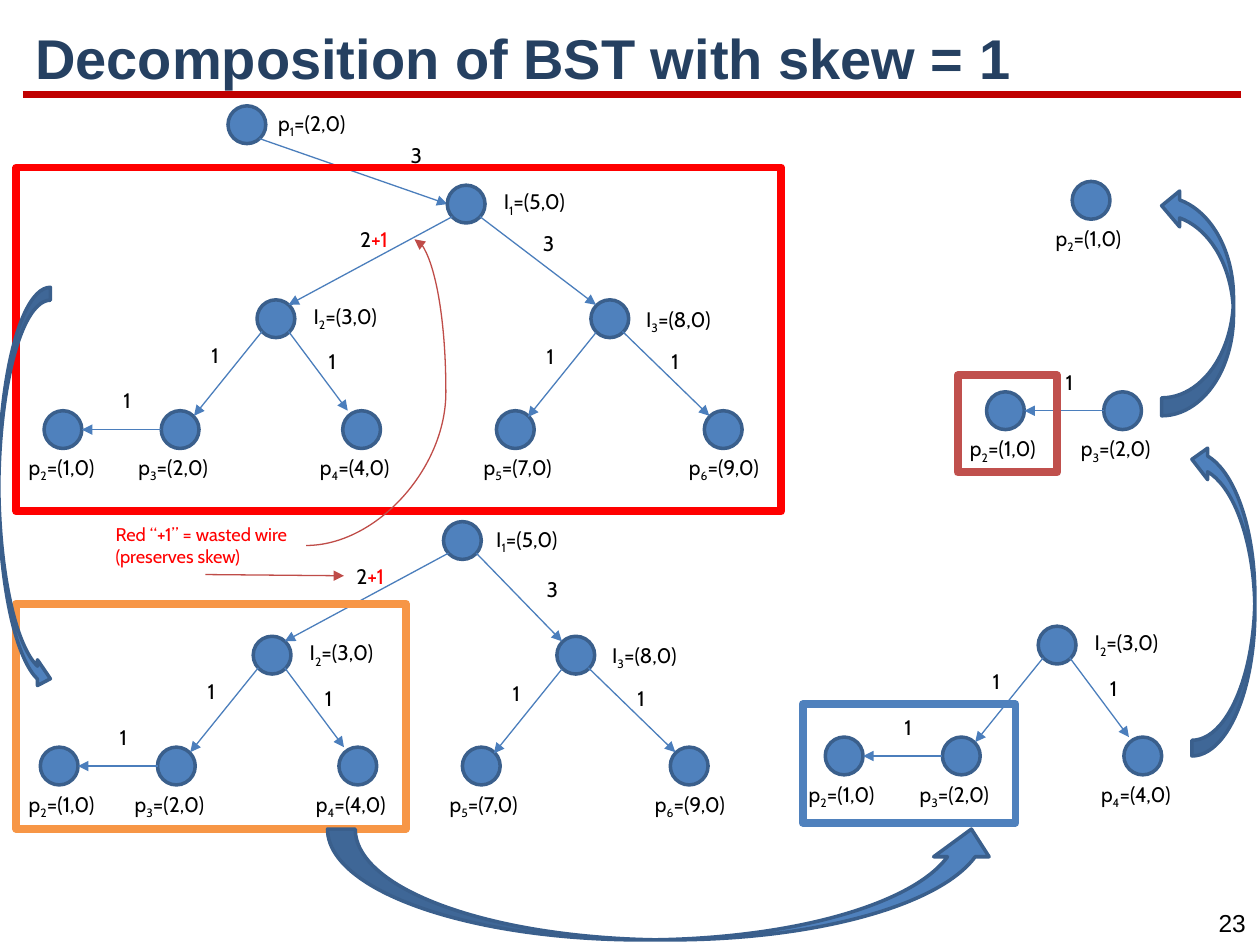
import pptx
import pptx.util
import pptx.dml.color
import pptx.enum.shapes
import pptx.enum.text
import pptx.oxml.ns
from dataclasses import dataclass
from lxml import etree

presentation = pptx.Presentation()
presentation.slide_width = pptx.util.Inches(10)
presentation.slide_height = pptx.util.Inches(7.5)

# Grid of 100 columns by 75 rows
COLUMN = presentation.slide_width / 100
ROW = presentation.slide_height / 75
NODE = 3
MIDDLE = NODE / 2
SHAPES = pptx.enum.shapes.MSO_SHAPE
CONNECTORS = pptx.enum.shapes.MSO_CONNECTOR
BLUE, OUTLINE, EDGE = "4F81BD", "3A5F8C", "4B7EBC"
RED, NOTE_RED = "FF0000", "BF4C48"


def colour(value):
    return pptx.dml.color.RGBColor.from_string(value)


def format_run(run, size, value="000000", font="Cabin", bold=False):
    run.font.size = pptx.util.Pt(size)
    run.font.name = font
    run.font.bold = bold
    run.font.color.rgb = colour(value)


@dataclass
class Region:
    """A part of the slide whose contents are placed from its left top corner."""
    slide: object
    left: float = 0
    top: float = 0

    def spot(self, column, row):
        return round((self.left + column) * COLUMN), round((self.top + row) * ROW)

    def box(self, column, row, width, height):
        return *self.spot(column, row), round(width * COLUMN), round(height * ROW)

    def shape(self, kind, bounds, fill=BLUE, line=OUTLINE, weight=2):
        shape = self.slide.shapes.add_shape(kind, *self.box(*bounds))
        shape.shadow.inherit = False
        if fill:
            shape.fill.solid()
            shape.fill.fore_color.rgb = colour(fill)
        else:
            shape.fill.background()
        shape.line.color.rgb = colour(line)
        shape.line.width = pptx.util.Pt(weight)
        return shape

    def frame(self, bounds, line):
        self.shape(SHAPES.RECTANGLE, bounds, None, line, 4.5)

    def text(self, column, row, parts, size=12, width=10, height=3, font="Cabin"):
        """Each part is a text and its colour."""
        text_box = self.slide.shapes.add_textbox(*self.box(column, row, width, height))
        text_box.text_frame.word_wrap = True
        paragraph = text_box.text_frame.paragraphs[0]
        for words, value in parts:
            run = paragraph.add_run()
            run.text = words
            format_run(run, size, value, font)
        return paragraph

    def weight(self, column, row, words="1", extra=""):
        parts = [(words, "000000")] + ([(extra, RED)] if extra else [])
        self.text(column, row, parts, width=5.5 if extra else 2.9)

    def node(self, column, row, name, value, shift=(-2.8, NODE)):
        """A circle and its label, such as p1=(2,0), at a shift from the circle."""
        self.shape(SHAPES.OVAL, (column, row, NODE, NODE))
        parts = [(words, "000000") for words in (name[0], name[1:], f"=({value},0)")]
        paragraph = self.text(column + shift[0], row + shift[1], parts)
        paragraph.runs[1]._r.get_or_add_rPr().set("baseline", "-25000")

    def line(self, start, end, value=EDGE, width=0.75, arrow=True,
             kind=CONNECTORS.STRAIGHT):
        connector = self.slide.shapes.add_connector(kind, *self.spot(*start), *self.spot(*end))
        connector.line.color.rgb = colour(value)
        connector.line.width = pptx.util.Pt(width)
        if arrow:
            tail = etree.SubElement(connector.line._get_or_add_ln(),
                                    pptx.oxml.ns.qn("a:tailEnd"))
            tail.set("type", "triangle")
        etree.SubElement(connector._element.spPr, pptx.oxml.ns.qn("a:effectLst"))
        return connector


def draw_pair(region, shift=-2.3):
    """p3 joined to p2."""
    region.node(0, 0, "p2", 1, (shift, NODE))
    region.node(9.3, 0, "p3", 2)
    region.line((9.3, MIDDLE), (NODE, MIDDLE))
    region.weight(5.3, -2.3)


def draw_left_tree(region, shift=-2.3):
    """I2 over the pair and p4."""
    draw_pair(region, shift)
    region.node(23.7, 0, "p4", 4)
    region.node(16.9, -8.8, "I2", 3, (3.5, -0.2))
    region.line((17.3, -6.3), (11.9, 0.4))
    region.line((19.4, -6.3), (24.1, 0))
    region.weight(12.3, -5.9)
    region.weight(21.6, -5.4)


def draw_right_tree(region):
    """I3 over p5 and p6."""
    region.node(0, 0, "p5", 7, (-2, NODE))
    region.node(16.5, 0, "p6", 9, (-2.2, NODE))
    region.node(7.5, -8.8, "I3", 8, (3.4, 0))
    region.line((7.9, -6.2), (2.5, 0.5))
    region.line((10, -6.3), (16.9, 0.4))
    region.weight(3, -5.8)
    region.weight(12.9, -5.4)


def draw_full_tree(region, right, root_shift, weight_spot, left_shift):
    """I1 over the left tree and the right tree."""
    draw_left_tree(region, left_shift)
    draw_right_tree(Region(region.slide, region.left + right, region.top))
    region.node(32, -17.9, "I1", 5, root_shift)
    region.line((32.4, -15.4), (19.4, -8.4))
    region.line((34.6, -15.4), (right + 7.9, -8.4))
    region.weight(24.1, -15.1, "2", "+1")
    region.weight(*weight_spot, "3")


def draw_header(region, title):
    region.line((1.8, 7.5), (98.5, 7.5), "C00000", 4.5, False)
    title.left, title.top, title.width, title.height = region.box(1.8, 1.6, 96.8, 6.5)
    title.text_frame.text = "Decomposition of BST with skew = 1"
    title.text_frame.vertical_anchor = pptx.enum.text.MSO_ANCHOR.MIDDLE
    paragraph = title.text_frame.paragraphs[0]
    paragraph.alignment = pptx.enum.text.PP_ALIGN.LEFT
    paragraph.line_spacing = 0.9
    format_run(paragraph.runs[0], 32, "254061", "Arial", True)
    number = region.text(95.6, 71.6, [("23", "000000")], 14, 4.4, 3.4, "Arial")
    number.alignment = pptx.enum.text.PP_ALIGN.CENTER


def draw_step_arrows(region):
    """Curved block arrows from each step to the next."""
    region.shape(SHAPES.CURVED_UP_ARROW, (26, 65.8, 53.3, 8.8))
    for bounds in ((94.6, 35.2, 5, 24.8), (92.2, 14.9, 5.7, 18.1)):
        arrow = region.shape(SHAPES.CURVED_LEFT_ARROW, bounds)
        arrow.rotation = 180
        arrow._element.spPr.xfrm.set("flipH", "1")
    region.shape(SHAPES.CURVED_RIGHT_ARROW, (-0.1, 22.8, 4.1, 32.1))


def draw_note(region):
    """The remark on wasted wire, pointing at both +1 weights."""
    region.text(0, 0, [("Red “+1” = wasted wire (preserves skew)", RED)], 10.5, 16.1, 4.5)
    region.line((8.1, 4.6), (19.1, 4.7), NOTE_RED)
    curve = region.line((16.1, 2.3), (24.7, -22), NOTE_RED, kind=CONNECTORS.CURVE)
    geometry = curve._element.spPr.find(pptx.oxml.ns.qn("a:prstGeom"))
    adjustments = geometry.find(pptx.oxml.ns.qn("a:avLst"))
    if adjustments is None:
        adjustments = etree.SubElement(geometry, pptx.oxml.ns.qn("a:avLst"))
    guide = etree.SubElement(adjustments, pptx.oxml.ns.qn("a:gd"))
    guide.set("name", "adj1")
    guide.set("fmla", "val 129000")


def main():
    slide = presentation.slides.add_slide(presentation.slide_layouts[5])
    page = Region(slide)
    draw_header(page, slide.shapes.title)

    # First tree, with p1 above it
    page.node(18.1, 8.4, "p1", 2, (NODE, -0.1))
    page.line((20.6, 11), (35.5, 16.2))
    page.weight(31.6, 10.8, "3")
    draw_full_tree(Region(slide, 3.5, 32.6), 35.9, (3.5, -0.2), (38.6, -14.8), -2.2)

    # Remaining steps
    draw_full_tree(Region(slide, 3.2, 59.3), 33.5, (3.2, -0.1), (39.2, -14), -1.9)
    draw_left_tree(Region(slide, 65.5, 58.5))
    draw_pair(Region(slide, 78.3, 31.1))
    page.node(85.1, 14.4, "p2", 1, (-2.3, NODE))

    # Frames around the part that goes on to the next step
    page.frame((1.3, 13.3, 60.7, 27.3), RED)
    page.frame((1.3, 47.9, 30.9, 17.9), "F79646")
    page.frame((63.7, 55.9, 16.9, 9.4), BLUE)
    page.frame((76, 29.8, 7.9, 7.7), "C0504D")

    draw_step_arrows(page)
    draw_note(Region(slide, 8.2, 41))
    presentation.save("out.pptx")


if __name__ == "__main__":
    main()
